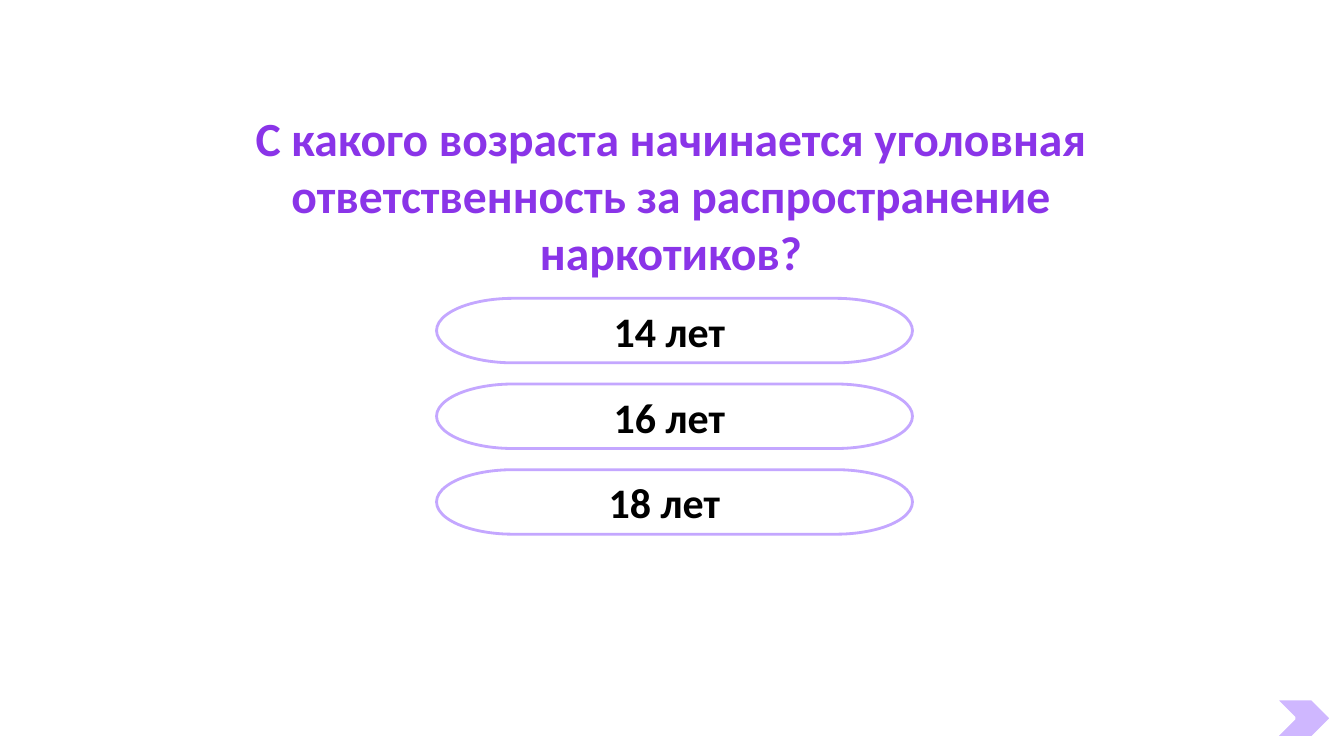
"""Builds a quiz slide with one question, three answers and a forward chevron."""
import pptx
import pptx.util
import pptx.dml.color
import pptx.enum.shapes
import pptx.enum.text

Inches, Pt = pptx.util.Inches, pptx.util.Pt
SHAPES = pptx.enum.shapes.MSO_SHAPE
THEME = {
    "font": "Calibri",
    "question": "8A34E8",
    "answer": "000000",
    "outline": "C4A7FF",
    "chevron": "CFB7FF",
    "chevron_line": "FFFFFF",
    "question_size": 34,
    "answer_size": 30,
}


def color(role):
    return pptx.dml.color.RGBColor.from_string(THEME[role])


def write(box, text, role):
    para = box.text_frame.paragraphs[0]
    para.text = text
    para.alignment = pptx.enum.text.PP_ALIGN.CENTER
    para.font.name = THEME["font"]
    para.font.size = Pt(THEME[role + "_size"])
    para.font.bold = True
    para.font.color.rgb = color(role)


deck = pptx.Presentation()
deck.slide_width, deck.slide_height = Inches(13.33), Inches(7.5)
page = deck.slides.add_slide(deck.slide_layouts[6])

question = page.shapes.add_textbox(Inches(1.75), Inches(1.03), Inches(9.81), Inches(1.82))
question.text_frame.word_wrap = True
question.text_frame.auto_size = pptx.enum.text.MSO_AUTO_SIZE.SHAPE_TO_FIT_TEXT
write(question, "С какого возраста начинается уголовная ответственность за распространение наркотиков?", "question")

answers = [("14 лет", 0.2), ("16 лет", 0.2), ("18 лет", 0.3)]
first_top, row_pitch = 2.96, 0.85
for row, (answer, right_inset) in enumerate(answers):
    top = first_top + row * row_pitch
    pill = page.shapes.add_shape(
        SHAPES.FLOWCHART_TERMINATOR, Inches(4.33), Inches(top), Inches(4.72), Inches(0.64))
    pill.shadow.inherit = False
    pill.fill.background()
    pill.line.color.rgb = color("outline")
    pill.line.width = Pt(2)
    pill.text_frame.word_wrap = True
    pill.text_frame.vertical_anchor = pptx.enum.text.MSO_ANCHOR.MIDDLE
    pill.text_frame.margin_right = Inches(right_inset)
    write(pill, answer, "answer")

chevron = page.shapes.add_shape(
    SHAPES.CHEVRON, Inches(12.64), Inches(6.93), Inches(0.57), Inches(0.39))
chevron.shadow.inherit = False
chevron.fill.solid()
chevron.fill.fore_color.rgb = color("chevron")
chevron.line.color.rgb = color("chevron_line")
chevron.line.width = Pt(2.5)

deck.save("out.pptx")
